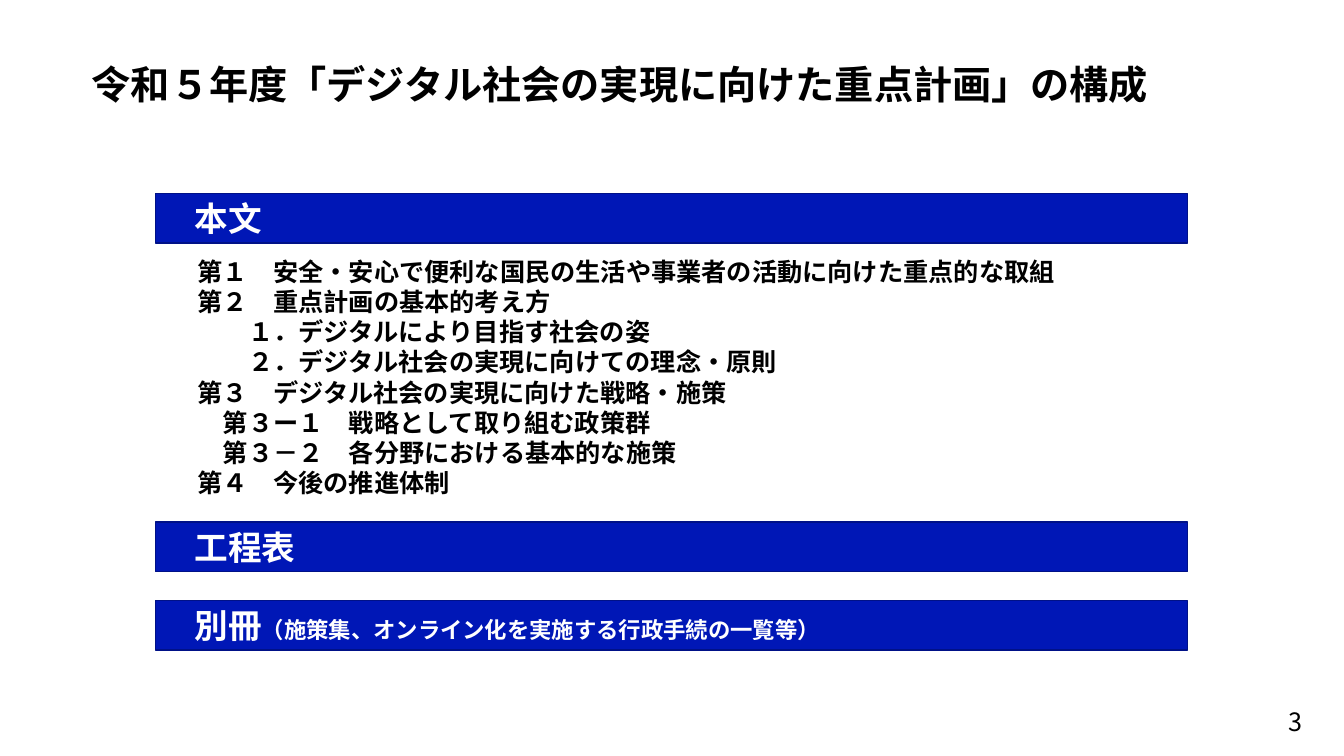
import dataclasses

import lxml.etree
import pptx
import pptx.dml.color
import pptx.enum.shapes
import pptx.enum.text
import pptx.oxml.ns
import pptx.util

Inches = pptx.util.Inches
Pt = pptx.util.Pt
ALIGN = pptx.enum.text.PP_ALIGN
ANCHOR = pptx.enum.text.MSO_ANCHOR

FONT = "Noto Sans CJK JP"
COLORS = {"text": "000000", "bar": "0017B6", "bar_line": "001187", "bar_text": "FFFFFF"}
INDENT_STEP = 0.25


@dataclasses.dataclass(frozen=True)
class Bar:
    top: float
    heading: str
    note: str = ""


@dataclasses.dataclass(frozen=True)
class OutlineItem:
    text: str
    depth: int = 0


TITLE = "令和５年度「デジタル社会の実現に向けた重点計画」の構成"
BARS = [
    Bar(1.92, "本文"),
    Bar(5.18, "工程表"),
    Bar(5.96, "別冊", "（施策集、オンライン化を実施する行政手続の一覧等）"),
]
OUTLINE = [
    OutlineItem("第１　安全・安心で便利な国民の生活や事業者の活動に向けた重点的な取組"),
    OutlineItem("第２　重点計画の基本的考え方"),
    OutlineItem("１．デジタルにより目指す社会の姿", 2),
    OutlineItem("２．デジタル社会の実現に向けての理念・原則", 2),
    OutlineItem("第３　デジタル社会の実現に向けた戦略・施策"),
    OutlineItem("第３ー１　戦略として取り組む政策群", 1),
    OutlineItem("第３－２　各分野における基本的な施策", 1),
    OutlineItem("第４　今後の推進体制"),
]


def rgb(name: str) -> pptx.dml.color.RGBColor:
    return pptx.dml.color.RGBColor.from_string(COLORS[name])


def format_span(span, size: float, color: str = "text", bold: bool = True) -> None:
    """Format a run, with the same typeface for Latin and East Asian text."""
    span.font.name = FONT
    span.font.size = Pt(size)
    span.font.bold = bold
    span.font.color.rgb = rgb(color)
    latin = span.font._element.find(pptx.oxml.ns.qn("a:latin"))
    east_asian = lxml.etree.Element(pptx.oxml.ns.qn("a:ea"), typeface=FONT)
    latin.addnext(east_asian)


def place(box, left: float, top: float, width: float, height: float) -> None:
    box.left, box.top = Inches(left), Inches(top)
    box.width, box.height = Inches(width), Inches(height)


def prepare_frame(frame, anchor) -> None:
    frame.word_wrap = True
    frame.auto_size = pptx.enum.text.MSO_AUTO_SIZE.NONE
    frame.vertical_anchor = anchor


def fill_title(box) -> None:
    place(box, 0.81, 0.45, 12.08, 0.8)
    prepare_frame(box.text_frame, ANCHOR.TOP)
    box.text_frame.text = TITLE
    para = box.text_frame.paragraphs[0]
    para.alignment = ALIGN.LEFT
    para.line_spacing = 1.2
    format_span(para.runs[0], 28)


def fill_outline(box) -> None:
    place(box, 1.86, 2.49, 9.61, 2.69)
    frame = box.text_frame
    prepare_frame(frame, ANCHOR.TOP)
    frame.text = "\n".join(item.text for item in OUTLINE)
    for item, para in zip(OUTLINE, frame.paragraphs):
        para.alignment = ALIGN.JUSTIFY
        para.line_spacing = Pt(21.6)
        para.space_before = Pt(0)
        properties = para._p.get_or_add_pPr()
        properties.set("marL", str(Inches(INDENT_STEP * item.depth)))
        properties.set("indent", "0")
        format_span(para.runs[0], 18)


def add_bar(page, bar: Bar) -> None:
    box = page.shapes.add_shape(
        pptx.enum.shapes.MSO_SHAPE.RECTANGLE,
        Inches(1.54), Inches(bar.top), Inches(10.24), Inches(0.49),
    )
    box.shadow.inherit = False
    box.fill.solid()
    box.fill.fore_color.rgb = rgb("bar")
    box.line.color.rgb = rgb("bar_line")
    box.line.width = Pt(1)
    frame = box.text_frame
    prepare_frame(frame, ANCHOR.MIDDLE)
    frame.margin_left = Inches(0.39)
    para = frame.paragraphs[0]
    para.alignment = ALIGN.LEFT
    for text, size in ((bar.heading, 24), (bar.note, 16)):
        if text:
            span = para.add_run()
            span.text = text
            format_span(span, size, "bar_text")


def add_page_number(page, number: int) -> None:
    box = page.shapes.add_textbox(Inches(11.59), Inches(6.96), Inches(1.43), Inches(0.4))
    prepare_frame(box.text_frame, ANCHOR.MIDDLE)
    box.text_frame.text = str(number)
    para = box.text_frame.paragraphs[0]
    para.alignment = ALIGN.RIGHT
    format_span(para.runs[0], 18, bold=False)


def main() -> None:
    deck = pptx.Presentation()
    deck.slide_width, deck.slide_height = Inches(13.33), Inches(7.5)
    page = deck.slides.add_slide(deck.slide_layouts[0])
    fill_title(page.shapes.title)
    fill_outline(page.placeholders[1])
    add_page_number(page, 3)
    for bar in BARS:
        add_bar(page, bar)
    deck.save("out.pptx")


if __name__ == "__main__":
    main()
